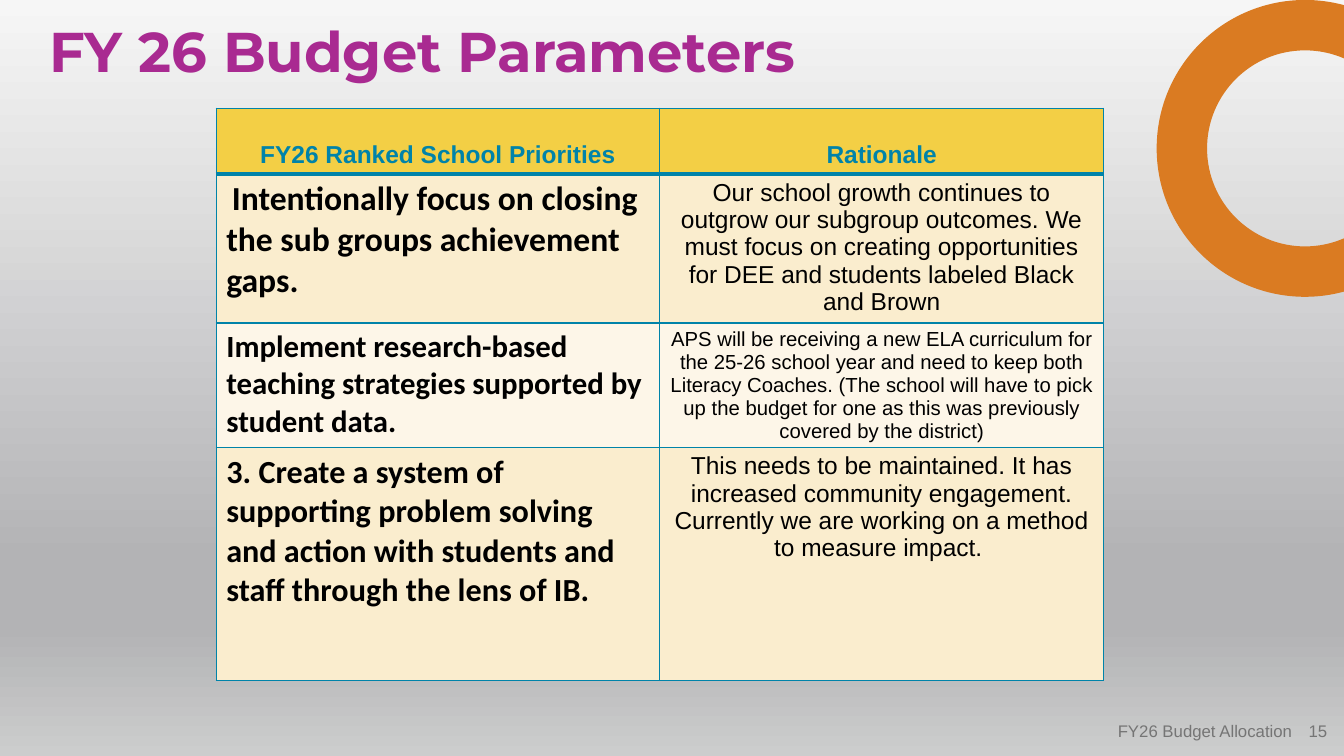
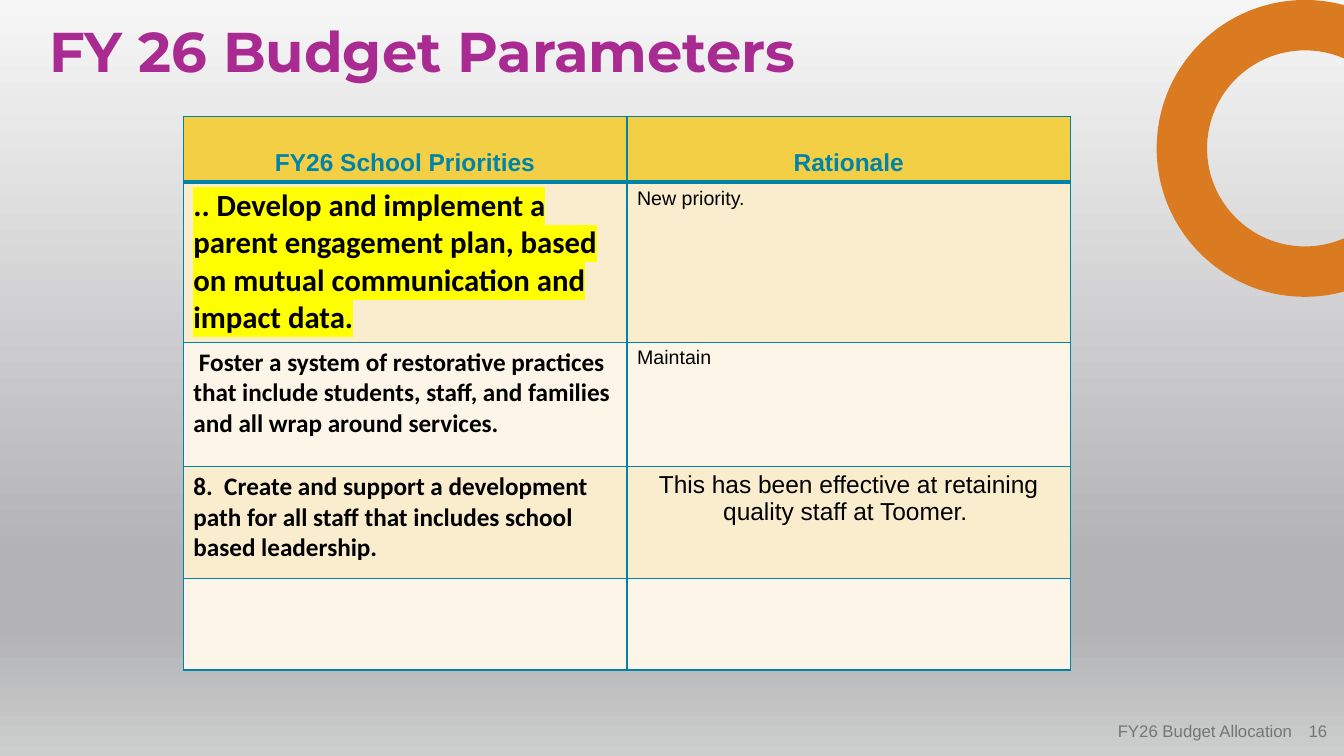
import math
import lxml.etree
import pptx
import pptx.dml.color
import pptx.enum.text
import pptx.oxml
import pptx.oxml.ns
import pptx.util

Cm = pptx.util.Cm
Pt = pptx.util.Pt
qn = pptx.oxml.ns.qn
ALIGN = pptx.enum.text.PP_ALIGN
ANCHOR = pptx.enum.text.MSO_ANCHOR

PURPLE, ORANGE, TEAL, GOLD = "A92A91", "DA7B22", "0083A9", "F3CF45"
BLACK, GREY, HIGHLIGHT = "000000", "757575", "FFFF00"
BANDS = ["FAEDCE", "FDF6E8"]
BACKDROP = [(0, "F6F6F6"), (74, "B3B3B5"), (83, "B3B3B5"), (100, "CCCDCD")]
SLIDE_WIDTH, SLIDE_HEIGHT = 33.87, 19.05
COLUMN_WIDTH = 11.18
RING_X, RING_Y, RING_OUTER, RING_INNER = 32.89, 3.74, 3.74, 2.47


def rgb(code):
    return pptx.dml.color.RGBColor.from_string(code)


def write(frame, text, size, font, color, bold=False, align=ALIGN.LEFT):
    frame.word_wrap = True
    frame.text = text
    paragraph = frame.paragraphs[0]
    paragraph.alignment = align
    for run in paragraph.runs:
        run.font.size = Pt(size)
        run.font.name = font
        run.font.bold = bold
        run.font.color.rgb = rgb(color)
    return paragraph


budget_pages = [
    {
        "number": 15, "left": 5.45, "top": 2.73,
        "heading": "FY26 Ranked School Priorities",
        "heights": [1.65, 3.76, 3.05, 5.87],
        "priorities": [
            ("Intentionally focus on closing the sub groups achievement gaps.", 24, 0.14, None,
             "Our school growth continues to outgrow our subgroup outcomes. We must focus on "
             "creating opportunities for DEE and students labeled Black and Brown",
             17.5, ALIGN.CENTER),
            ("Implement research-based teaching strategies supported by student data.",
             22, 0, None,
             "APS will be receiving a new ELA curriculum for the 25-26 school year and need to "
             "keep both Literacy Coaches. (The school will have to pick up the budget for one "
             "as this was previously covered by the district)",
             14.5, ALIGN.CENTER),
            ("3. Create a system of supporting problem solving and action with students and "
             "staff through the lens of IB.", 23, 0, None,
             "This needs to be maintained. It has increased community engagement. Currently we "
             "are working on a method to measure impact. ",
             17.5, ALIGN.CENTER),
        ],
    },
    {
        "number": 16, "left": 4.62, "top": 2.94,
        "heading": "FY26 School Priorities",
        "heights": [1.65, 4.03, 3.13, 2.82, 2.31],
        "priorities": [
            (".. Develop and implement a parent engagement plan, based on mutual communication "
             "and impact data.", 22, 0, HIGHLIGHT, "New priority.", 14, ALIGN.LEFT),
            ("Foster a system of restorative practices that include students, staff, and "
             "families and all wrap around services.", 18, 0.14, None,
             "Maintain", 14, ALIGN.LEFT),
            ("8.  Create and support a development path for all staff that includes school "
             "based leadership.", 18, 0, None,
             "This has been effective at retaining quality staff at Toomer. ",
             17.5, ALIGN.CENTER),
        ],
    },
]

prs = pptx.Presentation()
prs.slide_width = Cm(SLIDE_WIDTH)
prs.slide_height = Cm(SLIDE_HEIGHT)

backdrop = prs.slide_master.background.fill
backdrop.gradient()
backdrop.gradient_angle = 270
stops = prs.slide_master.element.find(".//" + qn("p:bg")).find(".//" + qn("a:gsLst"))
for stop in list(stops):
    stops.remove(stop)
for position, color in BACKDROP:
    stop = lxml.etree.SubElement(stops, qn("a:gs"), pos=str(position * 1000))
    lxml.etree.SubElement(stop, qn("a:srgbClr"), val=color)

ring_corners, ring_bends = [], []
for radius, direction in [(RING_OUTER, 1), (RING_INNER, -1)]:
    edge = math.acos((SLIDE_WIDTH - RING_X) / radius)
    angles = [edge, math.pi / 2, math.pi, 3 * math.pi / 2, 2 * math.pi - edge][::direction]
    corners = [(RING_X + radius * math.cos(a), RING_Y + radius * math.sin(a)) for a in angles]
    if ring_corners:
        ring_bends.append(None)
    for index in range(4):
        start, end = angles[index:index + 2]
        pull = radius * 4 / 3 * math.tan((end - start) / 4)
        (x1, y1), (x2, y2) = corners[index:index + 2]
        ring_bends.append([(x1 - pull * math.sin(start), y1 + pull * math.cos(start)),
                           (x2 + pull * math.sin(end), y2 - pull * math.cos(end))])
    ring_corners += corners
ring_corners = [(Cm(x), Cm(y)) for x, y in ring_corners]

for page in budget_pages:
    slide = prs.slides.add_slide(prs.slide_layouts[5])

    outline = slide.shapes.build_freeform(*ring_corners[0])
    outline.add_line_segments(ring_corners[1:], close=True)
    ring = outline.convert_to_shape()
    ring.shadow.inherit = False
    ring.fill.solid()
    ring.fill.fore_color.rgb = rgb(ORANGE)
    ring.line.fill.background()
    for segment, bend in zip(ring._element.findall(".//" + qn("a:lnTo")), ring_bends):
        if bend:
            segment.tag = qn("a:cubicBezTo")
            for place, (x, y) in enumerate(bend):
                segment.insert(place, segment.makeelement(
                    qn("a:pt"), {"x": str(Cm(x) - ring.left), "y": str(Cm(y) - ring.top)}))

    title = slide.shapes.title
    title.left, title.top, title.width, title.height = Cm(1.24), Cm(0.6), Cm(21.56), Cm(1.9)
    heading = write(title.text_frame, "FY 26 Budget Parameters", 40, "Montserrat", PURPLE, True)
    heading.line_spacing = 0.9
    title.text_frame.vertical_anchor = ANCHOR.TOP
    title.text_frame.margin_left = title.text_frame.margin_right = 0
    title.text_frame.margin_top = title.text_frame.margin_bottom = 0

    heights = page["heights"]
    priorities = slide.shapes.add_table(
        len(heights), 2, Cm(page["left"]), Cm(page["top"]),
        Cm(2 * COLUMN_WIDTH), Cm(sum(heights))).table
    priorities.horz_banding = False
    for column in priorities.columns:
        column.width = Cm(COLUMN_WIDTH)

    for row, height in enumerate(heights):
        priorities.rows[row].height = Cm(height)
        for cell in priorities.rows[row].cells:
            borders = {"L": 1, "R": 1, "T": 3 if row == 1 else 1, "B": 3 if row == 0 else 1}
            for side, points in borders.items():
                border = lxml.etree.SubElement(
                    cell._tc.get_or_add_tcPr(), qn("a:ln" + side), w=str(Pt(points)))
                paint = lxml.etree.SubElement(border, qn("a:solidFill"))
                lxml.etree.SubElement(paint, qn("a:srgbClr"), val=TEAL)
            cell.fill.solid()
            cell.fill.fore_color.rgb = rgb(BANDS[(row - 1) % 2] if row else GOLD)

    for column, label in enumerate([page["heading"], "Rationale"]):
        cell = priorities.cell(0, column)
        cell.vertical_anchor = ANCHOR.BOTTOM
        write(cell.text_frame, label, 17.5, "Arial", TEAL, True, ALIGN.CENTER)

    for row, entry in enumerate(page["priorities"], 1):
        priority, priority_size, indent, marker, rationale, rationale_size, align = entry
        goal = write(priorities.cell(row, 0).text_frame, priority, priority_size,
                     "Calibri", BLACK, True)
        write(priorities.cell(row, 1).text_frame, rationale, rationale_size,
              "Arial", BLACK, False, align)
        if indent:
            goal._p.get_or_add_pPr().set("indent", str(Cm(indent)))
        if marker:
            ink = goal.runs[0]._r.rPr.find(qn("a:solidFill"))
            highlight = pptx.oxml.parse_xml(
                '<a:highlight xmlns:a="http://schemas.openxmlformats.org/drawingml/2006/main">'
                f'<a:srgbClr val="{marker}"/></a:highlight>')
            ink.addnext(highlight)

    for text, left, width, margin in [
            (str(page["number"]), 32.82, 0.63, 0),
            ("FY26 Budget Allocation", 27.41, 5.41, 0.25)]:
        footer = slide.shapes.add_textbox(Cm(left), Cm(17.91), Cm(width), Cm(1.02)).text_frame
        footer.margin_left = footer.margin_right = Cm(margin)
        footer.vertical_anchor = ANCHOR.MIDDLE
        write(footer, text, 12, "Arial", GREY, False, ALIGN.RIGHT)

prs.save("out.pptx")
